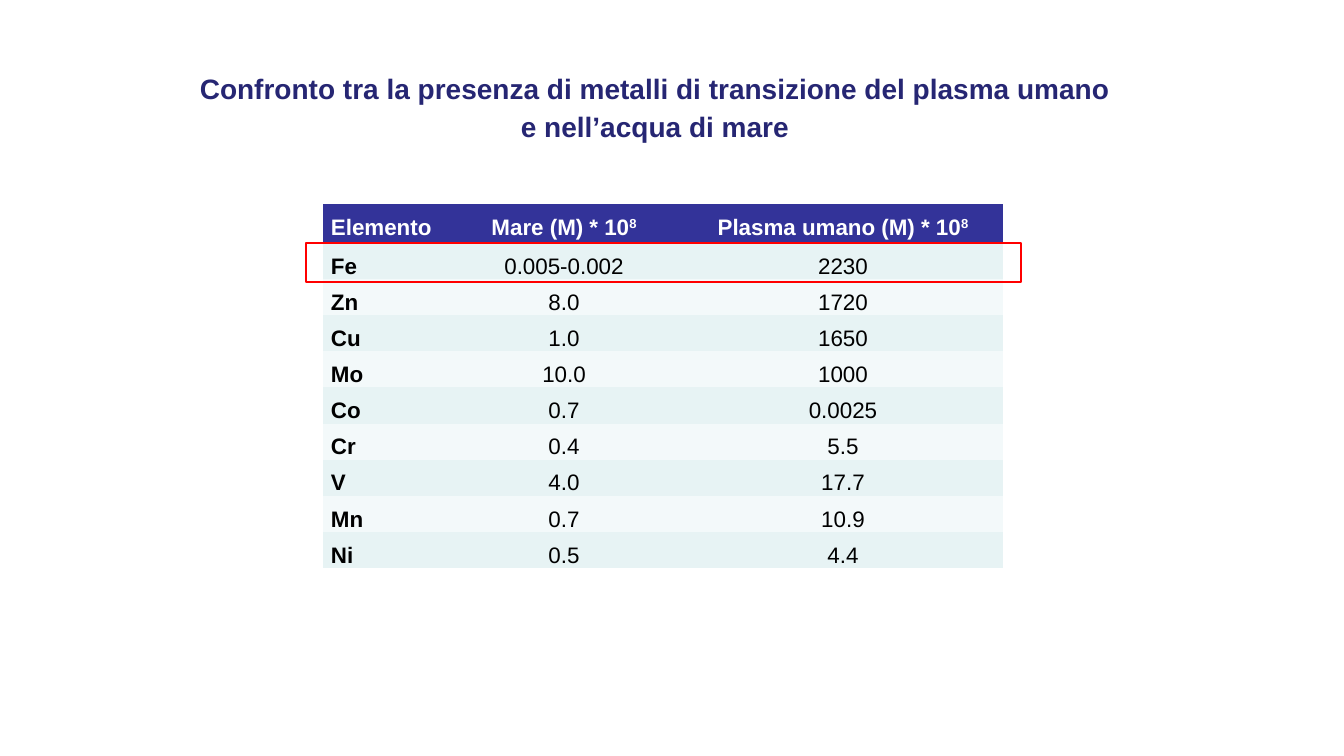
"""Build a slide comparing transition metals in sea water and human plasma."""
from pptx import Presentation
from pptx.dml.color import RGBColor
from pptx.enum.shapes import MSO_SHAPE
from pptx.enum.text import MSO_ANCHOR, MSO_AUTO_SIZE, PP_ALIGN
from pptx.oxml.ns import qn
from pptx.util import Pt

PX = 914400 / 100.8
COLORS = {"title": "262673", "header": "333399", "odd": "E7F3F4", "even": "F3F9FA",
          "white": "FFFFFF", "black": "000000", "highlight": "FF0000"}
NO_STYLE = "{2D5ABB26-0587-4C30-8999-92F81FD0307C}"
COLUMN_WIDTHS = [122, 238, 320]
HEADER_HEIGHT, ROW_HEIGHT = 39, 27
ROWS = [
    ["Elemento", "Mare (M) * 10^8", "Plasma umano (M) * 10^8"],
    ["Fe", "0.005-0.002", "2230"],
    ["Zn", "8.0", "1720"],
    ["Cu", "1.0", "1650"],
    ["Mo", "10.0", "1000"],
    ["Co", "0.7", "0.0025"],
    ["Cr", "0.4", "5.5"],
    ["V", "4.0", "17.7"],
    ["Mn", "0.7", "10.9"],
    ["Ni", "0.5", "4.4"],
]


def px(length):
    return round(length * PX)


def style_font(font, size, color, bold):
    font.name, font.size, font.bold = "Arial", Pt(size), bold
    font.color.rgb = RGBColor.from_string(COLORS[color])


deck = Presentation()
deck.slide_width, deck.slide_height = px(1344), px(756)
page = deck.slides.add_slide(deck.slide_layouts[5])

title = page.shapes.title
title.left, title.top, title.width, title.height = px(187), px(61), px(936), px(123)
frame = title.text_frame
frame.text = "Confronto tra la presenza di metalli di transizione del plasma umano e nell’acqua di mare"
frame.word_wrap = True
frame.auto_size = MSO_AUTO_SIZE.NONE
frame.vertical_anchor = MSO_ANCHOR.TOP
para = frame.paragraphs[0]
para.alignment, para.line_spacing = PP_ALIGN.CENTER, 1.15
style_font(para.font, 20, "title", True)

table_box = page.shapes.add_table(len(ROWS), len(COLUMN_WIDTHS), px(323), px(204), px(680), px(364))
table = table_box.table
table._tbl.tblPr.find(qn("a:tableStyleId")).text = NO_STYLE
for column, width in zip(table.columns, COLUMN_WIDTHS):
    column.width = px(width)
for r, values in enumerate(ROWS):
    table.rows[r].height = px(ROW_HEIGHT if r else HEADER_HEIGHT)
    fill_color = "header" if r == 0 else "odd" if r % 2 else "even"
    for c, value in enumerate(values):
        cell = table.cell(r, c)
        cell.fill.solid()
        cell.fill.fore_color.rgb = RGBColor.from_string(COLORS[fill_color])
        cell.margin_left = cell.margin_right = px(8)
        cell.margin_top = cell.margin_bottom = 0
        para = cell.text_frame.paragraphs[0]
        para.alignment = PP_ALIGN.CENTER if c else PP_ALIGN.JUSTIFY
        para.line_spacing, para.space_after = 1.45, Pt(10)
        style_font(para.font, 16, "black" if r else "white", r == 0 or c == 0)
        base, _, exponent = value.partition("^")
        para.add_run().text = base
        if exponent:
            span = para.add_run()
            span.text = exponent
            span._r.get_or_add_rPr().set("baseline", "30000")
table_box.height = px(364)

iron_box = page.shapes.add_shape(MSO_SHAPE.RECTANGLE, px(306), px(243), px(715), px(39))
iron_box.shadow.inherit = False
iron_box.fill.background()
iron_box.line.color.rgb = RGBColor.from_string(COLORS["highlight"])
iron_box.line.width = Pt(2)

deck.save("out.pptx")
